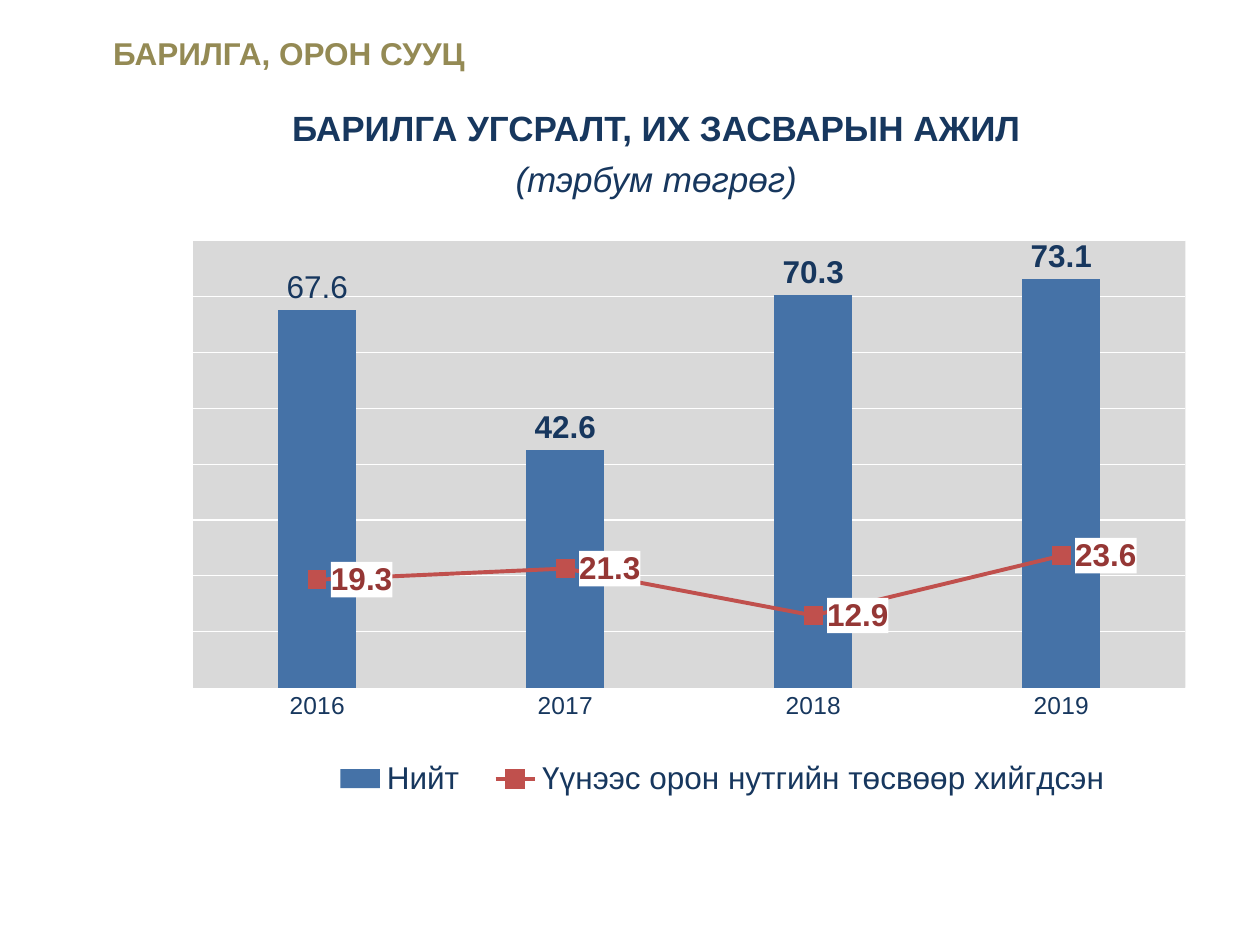
from dataclasses import dataclass

from lxml import etree
from pptx import Presentation
from pptx.chart.data import CategoryChartData
from pptx.dml.color import RGBColor as Color
from pptx.enum.chart import (XL_CHART_TYPE as ChartType, XL_LABEL_POSITION as LabelAt,
                             XL_LEGEND_POSITION as LegendAt, XL_MARKER_STYLE as Marker,
                             XL_TICK_MARK as Tick)
from pptx.enum.shapes import MSO_SHAPE as Shape
from pptx.enum.text import MSO_ANCHOR as Anchor, PP_ALIGN as Align
from pptx.oxml import parse_xml
from pptx.oxml.ns import nsdecls, qn
from pptx.util import Pt


@dataclass(frozen=True)
class Theme:
    font: str = "Arial"
    navy: str = "17375E"
    olive: str = "948A54"
    white: str = "FFFFFF"
    gray: str = "D9D9D9"
    blue: str = "4572A7"
    red: str = "C0504D"
    marker: str = "C00000"
    label_red: str = "953735"
    title: int = 20
    text: int = 18
    axis: int = 14


THEME = Theme()


def rgb(code):
    return Color.from_string(code)


def style(font, size=THEME.text, color=THEME.navy, bold=False, italic=False):
    font.name, font.size = THEME.font, Pt(size)
    font.bold, font.italic = bold, italic
    font.color.rgb = rgb(color)


def write(para, text, align=Align.LEFT, before=0, **look):
    para.alignment, para.space_before = align, Pt(before)
    span = para.add_run()
    span.text = text
    style(span.font, **look)


def solid_fill(color):
    return f'<a:solidFill><a:srgbClr val="{color}"/></a:solidFill>'


def manual_layout(x, y, w, h, inner=False):
    target = '<c:layoutTarget val="inner"/>' if inner else ""
    sizes = "".join(f'<c:{tag} val="{value}"/>'
                    for tag, value in zip("xywh", (x, y, w, h)))
    return parse_xml(f'<c:layout {nsdecls("c")}><c:manualLayout>{target}'
                     f'<c:xMode val="edge"/><c:yMode val="edge"/>{sizes}'
                     '</c:manualLayout></c:layout>')


def add_header(page, left, top, width, height):
    band = page.shapes.add_shape(Shape.RECTANGLE, Pt(left), Pt(top), Pt(width), Pt(height))
    band.shadow.inherit = False
    band.fill.solid()
    band.fill.fore_color.rgb = rgb(THEME.white)
    band.line.fill.background()
    band.text_frame.vertical_anchor = Anchor.TOP
    write(band.text_frame.paragraphs[0], "БАРИЛГА, ОРОН СУУЦ", color=THEME.olive, bold=True)


def add_title(page, left, top, width, height):
    frame = page.shapes.add_textbox(Pt(left), Pt(top), Pt(width), Pt(height)).text_frame
    frame.word_wrap = True
    frame.vertical_anchor = Anchor.BOTTOM
    frame.margin_bottom = Pt(6)
    write(frame.paragraphs[0], "БАРИЛГА УГСРАЛТ, ИХ ЗАСВАРЫН АЖИЛ",
          align=Align.CENTER, size=THEME.title, bold=True)
    write(frame.add_paragraph(), "(тэрбум төгрөг)",
          align=Align.CENTER, before=5, size=THEME.title, italic=True)


def split_line_plot(chart):
    """Move the second bar series to a line plot on the same axes."""
    bars = chart.plots[0]
    moved = bars.series[1]._element
    for tag in ("c:invertIfNegative",):
        for item in moved.findall(qn(tag)):
            moved.remove(item)
    bar_plot = moved.getparent()
    line_plot = parse_xml(f'<c:lineChart {nsdecls("c")}><c:grouping val="standard"/>'
                          '<c:varyColors val="0"/><c:marker val="1"/></c:lineChart>')
    line_plot.insert(2, moved)
    for axis in bar_plot.findall(qn("c:axId")):
        etree.SubElement(line_plot, qn("c:axId")).set("val", axis.get("val"))
    bar_plot.addnext(line_plot)
    return bars.series[0], chart.plots[1].series[0]


def show_labels(series, position, color):
    labels = series.data_labels
    labels.show_value = True
    labels.number_format, labels.number_format_is_linked = "0.0", False
    labels.position = position
    style(labels.font, color=color, bold=True)
    return labels


def add_chart(page, left, top, width, height):
    data = CategoryChartData(number_format="0.0")
    data.categories = ["2016", "2017", "2018", "2019"]
    data.add_series("Нийт", (67.6, 42.6, 70.3, 73.1))
    data.add_series("Үүнээс орон нутгийн төсвөөр хийгдсэн", (19.3, 21.3, 12.9, 23.6))
    chart = page.shapes.add_chart(ChartType.COLUMN_CLUSTERED, Pt(left), Pt(top),
                                  Pt(width), Pt(height), data).chart
    chart.has_title = False
    style(chart.font)
    chart.plots[0].gap_width = 219
    chart.plots[0].vary_by_categories = False
    total, local = split_line_plot(chart)

    # Columns
    total.format.fill.solid()
    total.format.fill.fore_color.rgb = rgb(THEME.blue)
    show_labels(total, LabelAt.OUTSIDE_END, THEME.navy)
    first = total.points[0].data_label
    style(first.font)
    first.position = LabelAt.OUTSIDE_END

    # Line with square markers and white labels
    local.smooth = False
    local.format.line.width = Pt(2.25)
    local.format.line.color.rgb = rgb(THEME.red)
    local.marker.style, local.marker.size = Marker.SQUARE, 10
    local.marker.format.fill.solid()
    local.marker.format.fill.fore_color.rgb = rgb(THEME.marker)
    local.marker.format.line.fill.background()
    labels = show_labels(local, LabelAt.RIGHT, THEME.label_red)
    labels._element.find(qn("c:txPr")).addprevious(parse_xml(
        f'<c:spPr {nsdecls("c", "a")}>{solid_fill(THEME.white)}</c:spPr>'))

    # Axes
    years, values = chart.category_axis, chart.value_axis
    style(years.tick_labels.font, size=THEME.axis)
    years.major_tick_mark = Tick.NONE
    years.format.line.width = Pt(0.75)
    years.format.line.color.rgb = rgb(THEME.gray)
    values.minimum_scale, values.maximum_scale, values.major_unit = 0, 80, 10
    values.major_gridlines.format.line.width = Pt(0.75)
    values.major_gridlines.format.line.color.rgb = rgb(THEME.white)
    values.visible = False

    # Legend and plot area
    chart.has_legend = True
    legend = chart.legend
    legend.position, legend.include_in_layout = LegendAt.BOTTOM, False
    style(legend.font)
    for layout in legend._element.findall(qn("c:layout")):
        legend._element.remove(layout)
    legend._element.find(qn("c:legendPos")).addnext(manual_layout(0.19, 0.9, 0.74, 0.09))
    area = chart._chartSpace.chart.plotArea
    for layout in area.findall(qn("c:layout")):
        area.remove(layout)
    area.insert(0, manual_layout(0.08, 0.03, 0.9, 0.76, inner=True))
    area.append(parse_xml(
        f'<c:spPr {nsdecls("c", "a")}>{solid_fill(THEME.gray)}</c:spPr>'))


def main():
    deck = Presentation()
    deck.slide_width, deck.slide_height = Pt(720), Pt(540)
    page = deck.slides.add_slide(deck.slide_layouts[6])
    add_title(page, 60, 54, 630, 66)
    add_chart(page, 60, 127.5, 630, 336)
    add_header(page, 57.6, 16, 662.4, 29)
    deck.save("out.pptx")


if __name__ == "__main__":
    main()
